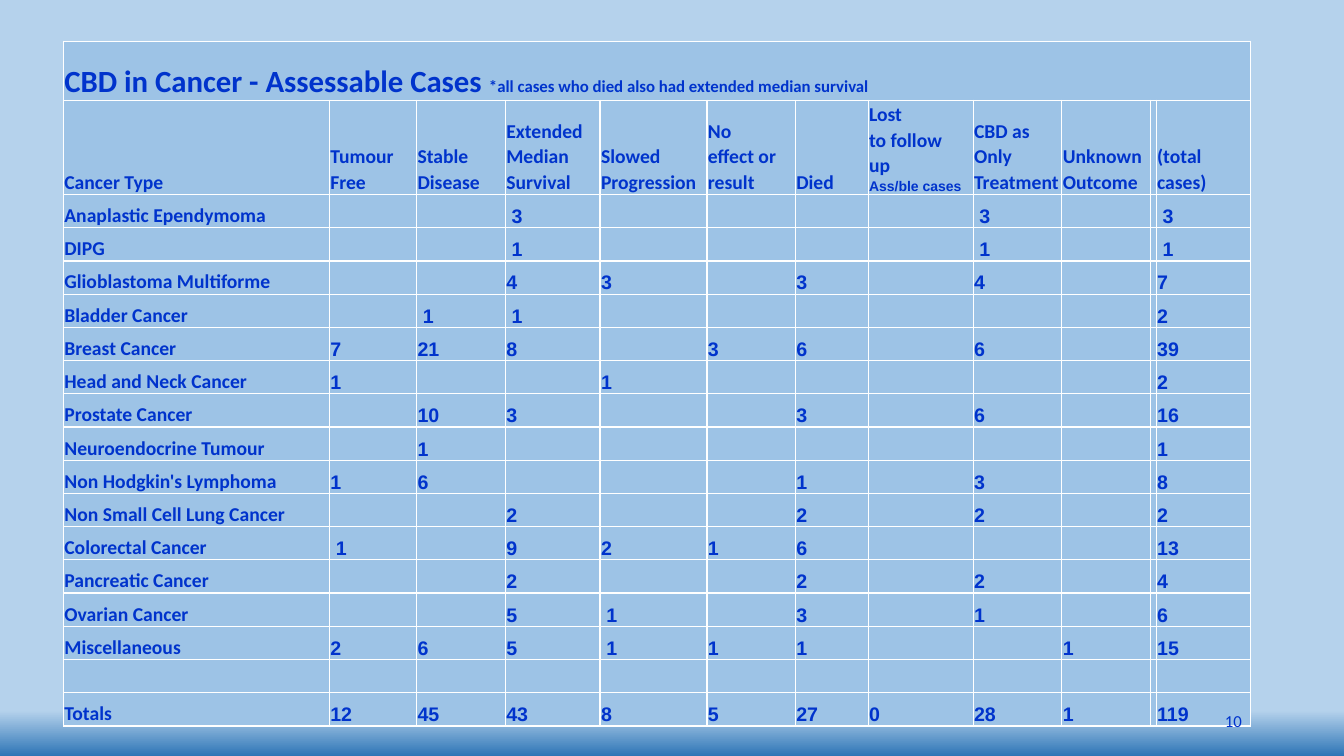
import copy

import pptx
import pptx.dml.color
import pptx.enum.text
import pptx.oxml
import pptx.oxml.ns
import pptx.util

Pt = pptx.util.Pt
qn = pptx.oxml.ns.qn

COLORS = {
    "text": "0033CC",
    "cell": "9DC3E6",
    "border": "FFFFFF",
    "sky": "B5D2EC",
    "horizon": "2E75B6",
}

COLUMN_WIDTHS = [190, 62.3, 63.4, 67.7, 76.4, 63.1, 52, 75, 63.4, 63.2, 3.6, 67.5]
TITLE_HEIGHT, HEADER_HEIGHT, ROW_HEIGHT = 42.1, 67, 23.75

TITLE = [
    ("CBD in Cancer - Assessable Cases ", 22),
    ("*all cases who died also had extended median survival", 12),
]
HEADERS = [
    "Cancer Type", "Tumour\nFree", "Stable\nDisease", "Extended\nMedian\nSurvival",
    "Slowed\nProgression", "No \neffect or\nresult", "Died", "Lost\nto follow\nup",
    "CBD as\nOnly\nTreatment", "Unknown\nOutcome", "", "(total \ncases)",
]
LOST_COLUMN = 7
LOST_NOTE = "Ass/ble cases"

# One row per cancer type; the fields follow HEADERS.
CASES = [
    "Anaplastic Ependymoma||| 3||||| 3||| 3",
    "DIPG||| 1||||| 1||| 1",
    "Glioblastoma Multiforme|||4|3||3||4|||7",
    "Bladder Cancer|| 1| 1||||||||2",
    "Breast Cancer|7|21|8||3|6||6|||39",
    "Head and Neck Cancer|1|||1|||||||2",
    "Prostate Cancer||10|3|||3||6|||16",
    "Neuroendocrine Tumour||1|||||||||1",
    "Non Hodgkin's Lymphoma|1|6||||1||3|||8",
    "Non Small Cell Lung Cancer|||2|||2||2|||2",
    "Colorectal Cancer| 1||9|2|1|6|||||13",
    "Pancreatic Cancer|||2|||2||2|||4",
    "Ovarian Cancer|||5| 1||3||1|||6",
    "Miscellaneous|2|6|5| 1|1|1|||1||15",
    "|||||||||||",
    "Totals|12|45|43|8|5|27|0|28|1||119",
]


class SlideBuilder:
    def __init__(self, slide):
        self.slide = slide

    def color(self, name):
        return pptx.dml.color.RGBColor.from_string(COLORS[name])

    def background(self):
        fill = self.slide.background.fill
        fill.gradient()
        fill.gradient_angle = 270
        for stop, position, name in zip(fill.gradient_stops, (0.94, 1), ("sky", "horizon")):
            stop.position = position
            stop.color.rgb = self.color(name)

    def format_run(self, run, size, font, bold=True):
        run.font.size = Pt(size)
        run.font.name = font
        run.font.bold = bold
        run.font.color.rgb = self.color("text")

    def format_paragraph(self, paragraph, size, font):
        """Style all runs and give line breaks the same size as the text."""
        paragraph.line_spacing = 1.07
        for run in paragraph.runs:
            self.format_run(run, size, font)
        for line_break in paragraph._p.findall(qn("a:br")):
            line_break.insert(0, copy.deepcopy(paragraph.runs[0]._r.find(qn("a:rPr"))))

    def style_cell(self, cell):
        cell.vertical_anchor = pptx.enum.text.MSO_ANCHOR.BOTTOM
        cell.margin_left = cell.margin_right = cell.margin_top = Pt(0.7)
        cell.margin_bottom = Pt(0)
        properties = cell._tc.get_or_add_tcPr()
        for side in "LRTB":
            properties.append(pptx.oxml.parse_xml(
                f'<a:ln{side} {pptx.oxml.ns.nsdecls("a")} w="12700"><a:solidFill>'
                f'<a:srgbClr val="{COLORS["border"]}"/></a:solidFill></a:ln{side}>'))
        cell.fill.solid()
        cell.fill.fore_color.rgb = self.color("cell")

    def table(self, left, top, widths, heights):
        frame = self.slide.shapes.add_table(
            len(heights), len(widths), Pt(left), Pt(top), Pt(sum(widths)), Pt(sum(heights)))
        table = frame.table
        table.first_row = table.horz_banding = False
        for column, width in zip(table.columns, widths):
            column.width = Pt(width)
        for row, height in zip(table.rows, heights):
            row.height = Pt(height)
        for cell in table.iter_cells():
            self.style_cell(cell)
        return table

    def title_row(self, table, parts):
        cell = table.cell(0, 0)
        cell.merge(table.cell(0, len(table.columns) - 1))
        paragraph = cell.text_frame.paragraphs[0]
        paragraph.line_spacing = 1.07
        for text, size in parts:
            run = paragraph.add_run()
            run.text = text
            self.format_run(run, size, "Calibri")

    def text_row(self, table, row, texts, value_font):
        for column, text in enumerate(texts):
            if text:
                paragraph = table.cell(row, column).text_frame.paragraphs[0]
                paragraph.text = text
                self.format_paragraph(paragraph, 14, value_font if column else "Calibri")

    def cell_note(self, cell, text):
        paragraph = cell.text_frame.add_paragraph()
        paragraph.text = text
        self.format_paragraph(paragraph, 10, "Arial")

    def page_number(self, left, top, width, height, text):
        box = self.slide.shapes.add_textbox(Pt(left), Pt(top), Pt(width), Pt(height))
        frame = box.text_frame
        frame.word_wrap = True
        frame.vertical_anchor = pptx.enum.text.MSO_ANCHOR.MIDDLE
        frame.text = text
        paragraph = frame.paragraphs[0]
        paragraph.alignment = pptx.enum.text.PP_ALIGN.RIGHT
        self.format_run(paragraph.runs[0], 12, "Calibri", bold=False)


def main():
    presentation = pptx.Presentation()
    presentation.slide_width, presentation.slide_height = Pt(960), Pt(540)
    builder = SlideBuilder(presentation.slides.add_slide(presentation.slide_layouts[6]))
    builder.background()

    heights = [TITLE_HEIGHT, HEADER_HEIGHT] + [ROW_HEIGHT] * len(CASES)
    table = builder.table(45.3, 29.5, COLUMN_WIDTHS, heights)
    builder.title_row(table, TITLE)
    builder.text_row(table, 1, HEADERS, "Calibri")
    builder.cell_note(table.cell(1, LOST_COLUMN), LOST_NOTE)
    for row, case in enumerate(CASES, start=2):
        builder.text_row(table, row, case.split("|"), "Arial")

    builder.page_number(678.2, 500.5, 216, 28.8, "10")
    presentation.save("out.pptx")


if __name__ == "__main__":
    main()
